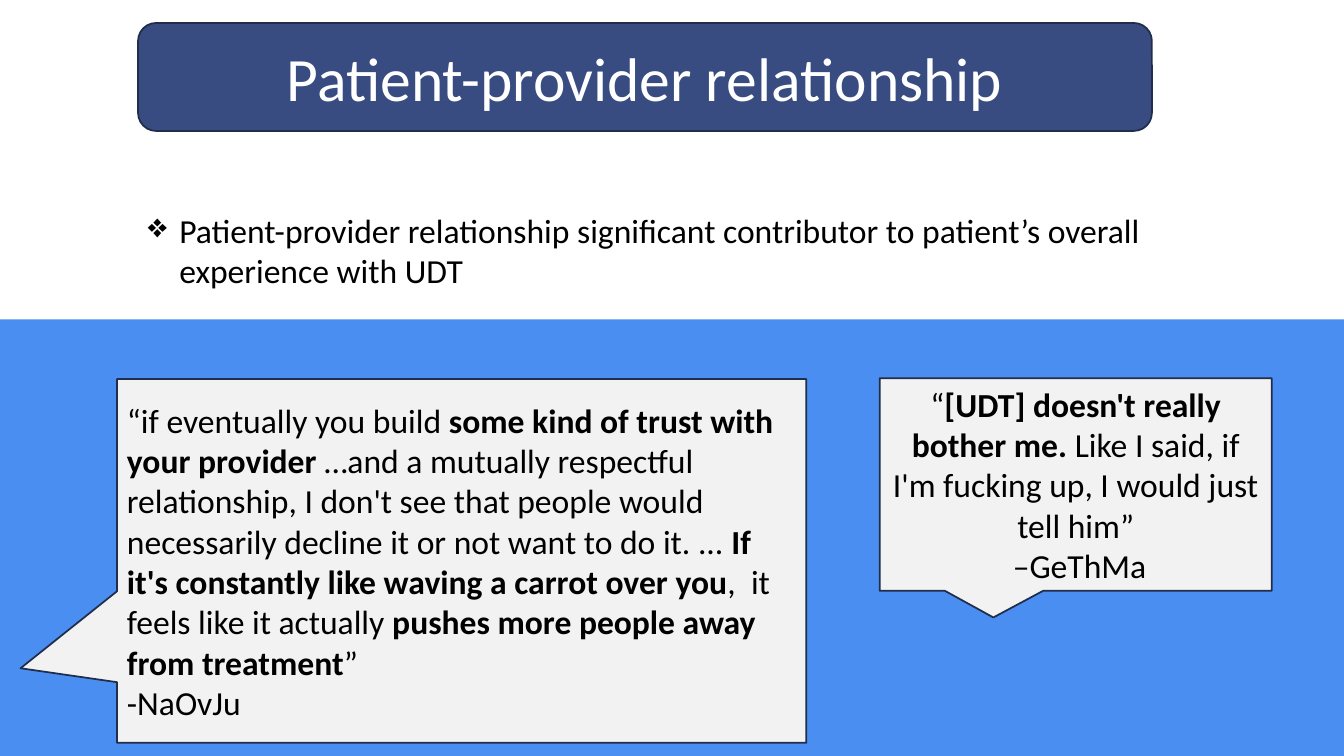
from lxml import etree
from pptx import Presentation
from pptx.dml.color import RGBColor
from pptx.enum.shapes import MSO_SHAPE as Preset
from pptx.enum.text import MSO_ANCHOR as Anchor, PP_ALIGN as Align
from pptx.oxml.ns import qn
from pptx.util import Cm, Pt

COLORS = {
    "navy": "384C81",
    "outline": "202D4B",
    "blue": "4A8EF2",
    "paper": "F2F2F2",
    "white": "FFFFFF",
    "black": "000000",
}


def add_box(preset, left, top, width, height, fill, outlined=True):
    """Add a flat filled shape; lengths are in centimetres."""
    shape = slide.shapes.add_shape(preset, Cm(left), Cm(top), Cm(width), Cm(height))
    shape.shadow.inherit = False
    shape.fill.solid()
    shape.fill.fore_color.rgb = RGBColor.from_string(COLORS[fill])
    if outlined:
        shape.line.color.rgb = RGBColor.from_string(COLORS["outline"])
        shape.line.width = Pt(1.25)
    else:
        shape.line.fill.background()
    return shape


def write_text(shape, paragraphs, align=Align.LEFT, size=24, color="black", anchor=Anchor.MIDDLE):
    """Fill a shape with paragraphs, each a list of (text, bold) runs."""
    frame = shape.text_frame
    frame.word_wrap = True
    frame.vertical_anchor = anchor
    font_format = {"name": "Calibri", "size": Pt(size)}
    for index, runs in enumerate(paragraphs):
        paragraph = frame.add_paragraph() if index else frame.paragraphs[0]
        paragraph.alignment = align
        for text, bold in runs:
            run = paragraph.add_run()
            run.text = text
            for attribute, value in {**font_format, "bold": bold}.items():
                setattr(run.font, attribute, value)
            run.font.color.rgb = RGBColor.from_string(COLORS[color])


presentation = Presentation()
presentation.slide_width, presentation.slide_height = Cm(33.87), Cm(19.05)
slide = presentation.slides.add_slide(presentation.slide_layouts[6])

# Title and key point share one column
column_left, column_width = 3.48, 25.55
title = add_box(Preset.FLOWCHART_ALTERNATE_PROCESS, column_left, 0.58, column_width, 2.72, "navy")
write_text(title, [[("Patient-provider relationship", False)]], Align.CENTER, 44, "white")

key_point = slide.shapes.add_textbox(Cm(column_left), Cm(5.16), Cm(column_width), Cm(2.31))
key_point_text = "Patient-provider relationship significant contributor to patient’s overall experience with UDT"
write_text(key_point, [[(key_point_text, False)]], anchor=Anchor.TOP)
properties = key_point.text_frame.paragraphs[0]._p.get_or_add_pPr()
properties.set("marL", str(Cm(0.79)))
properties.set("indent", str(-Cm(0.79)))
etree.SubElement(properties, qn("a:buChar")).set("char", "❖")

# Quotes on the blue band
add_box(Preset.RECTANGLE, 0, 8.05, 33.87, 11, "blue", outlined=False)

trust_quote = [
    [
        ("“if eventually you build ", False),
        ("some kind of trust with your provider ", True),
        ("…and a mutually respectful relationship, I don't see that people would "
         "necessarily decline it or not want to do it. ... ", False),
        ("If it's constantly like waving a carrot over you", True),
        (",  it feels like it actually ", False),
        ("pushes more people away from treatment", True),
        ("”", False),
    ],
    [("-NaOvJu", False)],
]
honesty_quote = [
    [
        ("“", False),
        ("[UDT] doesn't really bother me. ", True),
        ("Like I said, if I'm fucking up, I would just tell him”", False),
    ],
    [(" –GeThMa", False)],
]
callouts = [
    ((2.95, 9.55, 17.37, 9.17), (-0.64, 0.295), trust_quote, Align.LEFT),
    ((22.17, 9.53, 9.88, 5.36), (-0.21, 0.625), honesty_quote, Align.CENTER),
]
for place, tip, quote, align in callouts:
    callout = add_box(Preset.RECTANGULAR_CALLOUT, *place, "paper")
    callout.adjustments[0], callout.adjustments[1] = tip
    write_text(callout, quote, align)

presentation.save("out.pptx")
